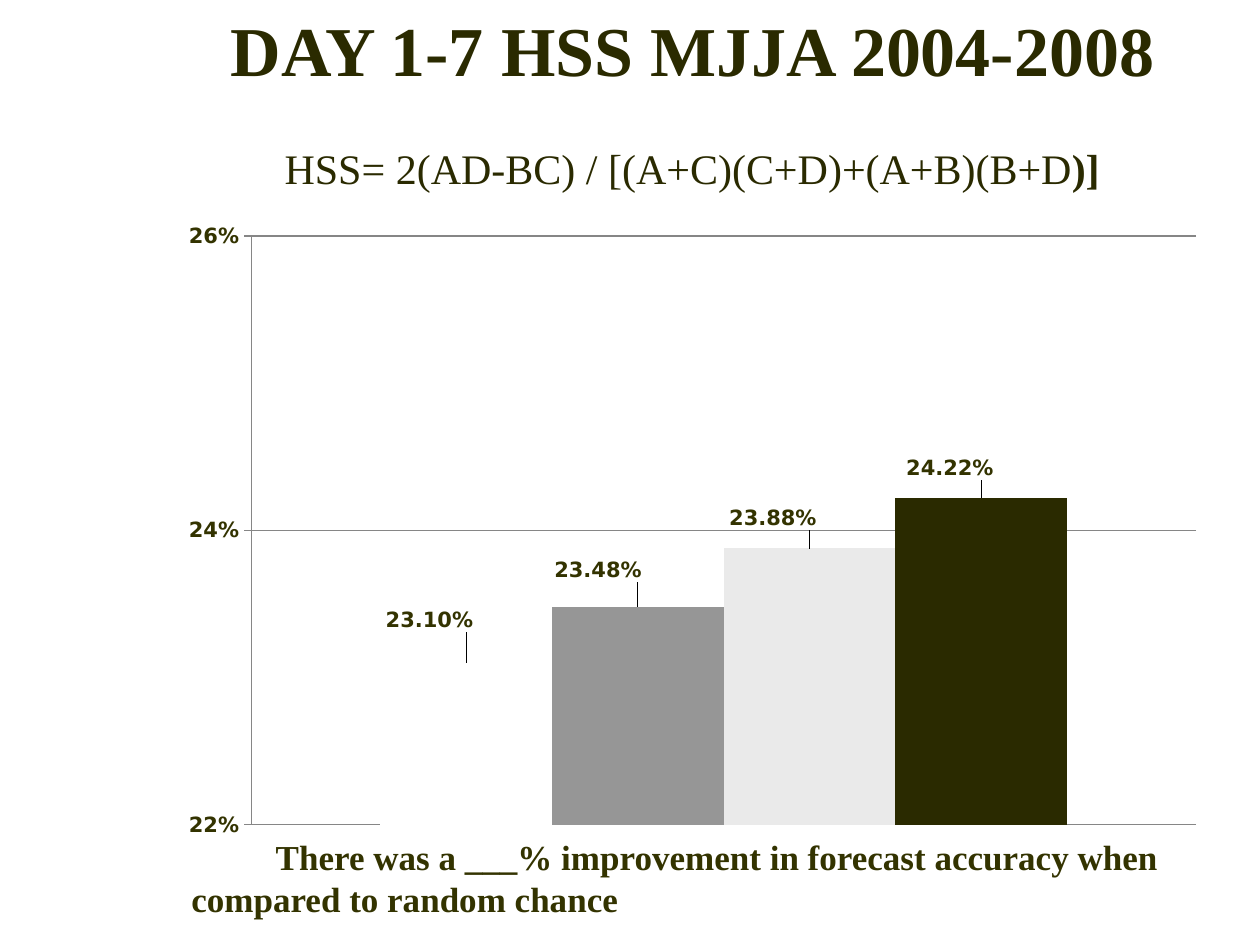
from pptx import Presentation, oxml
from pptx import util as u
from pptx.chart import data
from pptx.dml import color
from pptx.enum import chart as ec, text
from pptx.oxml import ns

theme = {
    "serif": "Times New Roman", "sans": "DejaVu Sans",
    "dark": "2A2A00", "text": "333300", "grid": "868686",
    "title": 40, "formula": 24, "note": 20, "label": 12, "base": 10,
}


def style(font, size, shade, face, bold=True):
    font.size = u.Pt(theme[size])
    font.color.rgb = color.RGBColor.from_string(theme[shade])
    font.name = theme[face]
    font.bold = bold


def add_text(box, words, indent):
    """Add a wrapped text box with a first-line indent; return its paragraph."""
    frame = slide.shapes.add_textbox(*map(u.Inches, box)).text_frame
    frame.word_wrap = True
    para = frame.paragraphs[0]
    para._p.get_or_add_pPr().set("indent", str(u.Inches(indent)))
    para.add_run().text = words
    return para


deck = Presentation()
deck.slide_width, deck.slide_height = u.Inches(10), u.Inches(7.5)
slide = deck.slides.add_slide(deck.slide_layouts[5])

# Title
title = slide.shapes.title
title.left, title.top = u.Inches(1.33), u.Inches(0)
title.width, title.height = u.Inches(8.33), u.Inches(0.77)
title.text_frame.text = "DAY 1-7 HSS MJJA 2004-2008"
title.text_frame.vertical_anchor = text.MSO_ANCHOR.BOTTOM
head = title.text_frame.paragraphs[0]
head.alignment = text.PP_ALIGN.CENTER
style(head.font, "title", "dark", "serif")

# Formula, with a bold ending
formula = add_text((1.33, 1.08, 8.25, 0.91),
                   "HSS= 2(AD-BC) / [(A+C)(C+D)+(A+B)(B+D", 0.83)
style(formula.font, "formula", "dark", "serif", False)
end = formula.add_run()
end.text = ")]"
end.font.bold = True

# Note under the chart
note = add_text((1.42, 6.58, 8.17, 0.77),
                "There was a ___% improvement in forecast accuracy when "
                "compared to random chance", 0.67)
style(note.font, "note", "text", "serif")

# Chart: value, bar colour, label shift as a share of the chart
bars = [
    (0.2310, "FFFFFF", -0.035, -0.04),
    (0.2348, "969696", -0.038, -0.03),
    (0.2388, "EAEAEA", -0.035, -0.02),
    (0.2422, "2A2A00", -0.03, -0.02),
]
table = data.CategoryChartData(number_format="0.00%")
table.categories = ["1"]
for num, bar in enumerate(bars, 1):
    table.add_series(f"Series {num}", [bar[0]])
chart = slide.shapes.add_chart(
    ec.XL_CHART_TYPE.COLUMN_CLUSTERED,
    *map(u.Inches, (1.33, 1.67, 8.33, 5.08)), table).chart
chart.has_legend = chart.has_title = False
style(chart.font, "base", "text", "sans", False)
plot = chart.plots[0]
plot.gap_width, plot.overlap, plot.vary_by_categories = 150, 0, False

# Axes
chart.category_axis.visible = False
axis = chart.value_axis
axis.minimum_scale, axis.maximum_scale, axis.major_unit = 0.22, 0.26, 0.02
axis.major_tick_mark = ec.XL_TICK_MARK.CROSS
axis.tick_labels.number_format = "0%"
axis.tick_labels.number_format_is_linked = False
style(axis.tick_labels.font, "label", "text", "sans")
for line in (axis.format.line, axis.major_gridlines.format.line):
    line.color.rgb = color.RGBColor.from_string(theme["grid"])
    line.width = u.Pt(0.75)

# Fixed plot area
area = chart._chartSpace.chart.plotArea
for old in area.findall(ns.qn("c:layout")):
    area.remove(old)
area.insert(0, oxml.parse_xml(
    f'<c:layout {ns.nsdecls("c")}><c:manualLayout>'
    '<c:layoutTarget val="inner"/><c:xMode val="edge"/><c:yMode val="edge"/>'
    '<c:x val="0.08"/><c:y val="0.04"/><c:w val="0.9"/><c:h val="0.92"/>'
    '</c:manualLayout></c:layout>'))

# Bars and their shifted labels
for row, (value, shade, dx, dy) in zip(plot.series, bars):
    row.format.fill.solid()
    row.format.fill.fore_color.rgb = color.RGBColor.from_string(shade)
    row.invert_if_negative = False
    labels = row.data_labels
    labels.show_value = True
    labels.number_format, labels.number_format_is_linked = "0.00%", False
    style(labels.font, "label", "text", "sans")
    label = row.points[0].data_label
    style(label.font, "label", "text", "sans")
    label.position = ec.XL_LABEL_POSITION.OUTSIDE_END
    item = row._element.find(".//" + ns.qn("c:dLbl"))
    item.insert(1, oxml.parse_xml(
        f'<c:layout {ns.nsdecls("c")}><c:manualLayout>'
        f'<c:x val="{dx}"/><c:y val="{dy}"/></c:manualLayout></c:layout>'))
    item.insert(2, oxml.parse_xml(
        f'<c:numFmt {ns.nsdecls("c")} formatCode="0.00%" sourceLinked="0"/>'))

deck.save("out.pptx")
